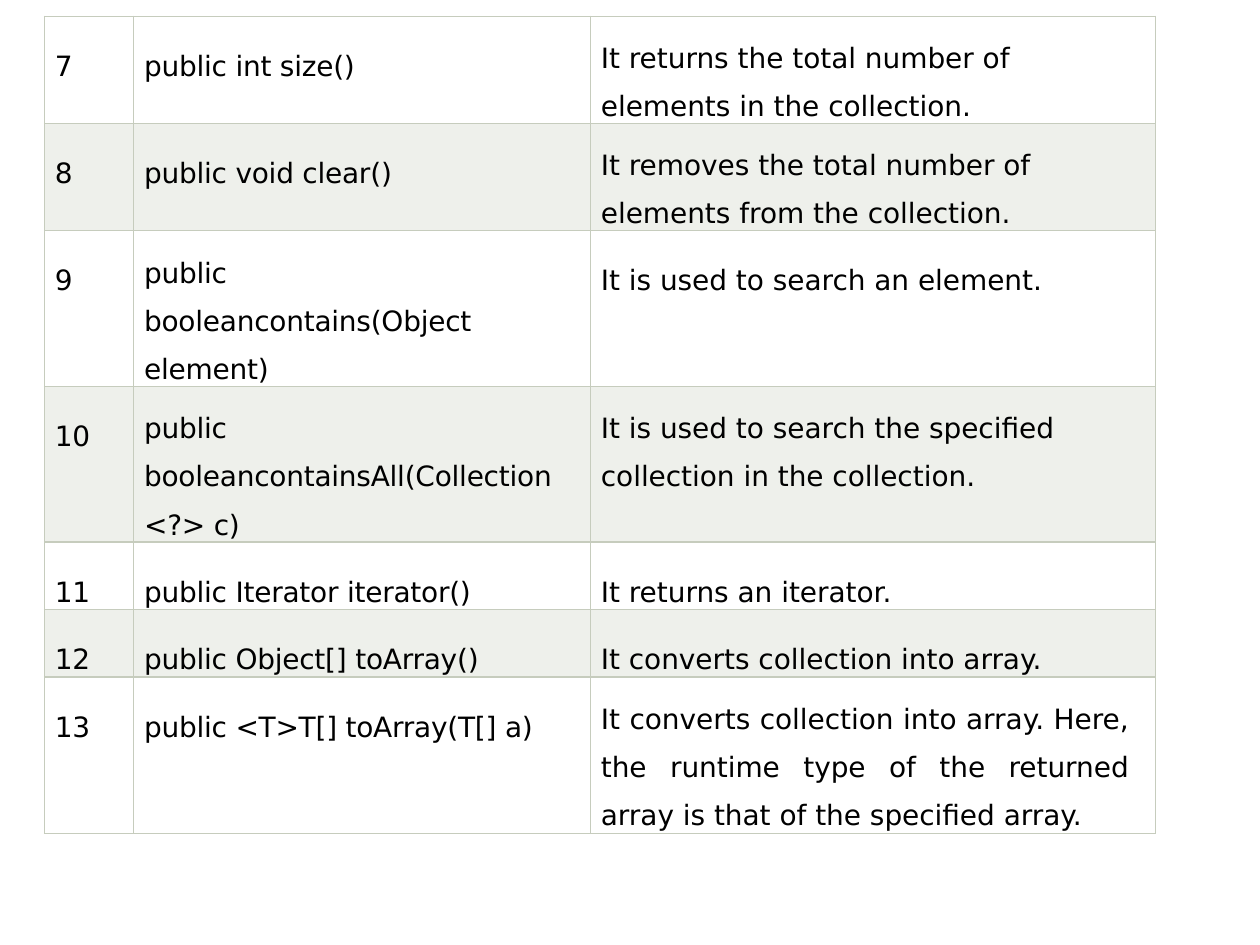
from dataclasses import dataclass

from lxml.etree import SubElement
from pptx import Presentation
from pptx.dml.color import RGBColor
from pptx.enum.text import PP_ALIGN as Align
from pptx.oxml.ns import qn
from pptx.table import _Cell as Cell
from pptx.util import Pt

BLACK = RGBColor(0x00, 0x00, 0x00)
BAND = RGBColor(0xEE, 0xF0, 0xEB)
EDGE = RGBColor(0xC6, 0xCC, 0xBD)
FONT = "DejaVu Sans"
LEFT, TOP = 25.4, 9.2
SINGLE, LOOSE = 19.6, 6.2  # space above one-line and wrapped text


@dataclass
class Col:
    width: float
    right: float  # right margin
    track: int    # letter spacing in hundredths of a point


@dataclass
class Row:
    height: float
    texts: tuple[str, str, str]
    wrapped: tuple[int, ...] = ()  # columns whose text wraps
    justify: bool = False


COLS = [Col(51, 0, -20), Col(261, 19, -10), Col(323, 15, 0)]
ROWS = [
    Row(61, ("7", "public int size()",
             "It returns the total number of elements in the collection."), (2,)),
    Row(61, ("8", "public void clear()",
             "It removes the total number of elements from the collection."), (2,)),
    Row(89, ("9", "public booleancontains(Object element)",
             "It is used to search an element."), (1,)),
    Row(89, ("10", "public booleancontainsAll(Collection<?> c)",
             "It is used to search the specified collection in the collection."),
        (1, 2)),
    Row(38.6, ("11", "public Iterator iterator()", "It returns an iterator.")),
    Row(38.6, ("12", "public Object[] toArray()",
               "It converts collection into array.")),
    Row(89.4, ("13", "public <T>T[] toArray(T[] a)",
               "It converts collection into array. Here, the runtime type of "
               "the returned array is that of the specified array."), (2,), True),
]


def add_edges(cell: Cell) -> None:
    props = cell._tc.get_or_add_tcPr()
    for side in ("lnL", "lnR", "lnT", "lnB"):
        line = SubElement(props, qn(f"a:{side}"), w=str(Pt(0.75)))
        fill = SubElement(line, qn("a:solidFill"))
        SubElement(fill, qn("a:srgbClr"), val=str(EDGE))


def fill_cell(cell: Cell, text: str, col: Col, wrapped: bool,
              justify: bool, band: bool) -> None:
    add_edges(cell)
    if band:
        cell.fill.solid()
        cell.fill.fore_color.rgb = BAND
    else:
        cell.fill.background()
    cell.margin_left, cell.margin_right = Pt(6), Pt(col.right)
    cell.margin_top, cell.margin_bottom = Pt(LOOSE if wrapped else SINGLE), Pt(0)

    # Text
    cell.text_frame.text = text
    para = cell.text_frame.paragraphs[0]
    para.alignment = Align.JUSTIFY if justify else Align.LEFT
    if wrapped:
        para.line_spacing = 1.49
    run = para.runs[0]
    run.font.name, run.font.size = FONT, Pt(16)
    run.font.color.rgb = BLACK
    run.font._element.set("spc", str(col.track))


def main() -> None:
    deck = Presentation()
    deck.slide_width, deck.slide_height = Pt(720), Pt(540)
    slide = deck.slides.add_slide(deck.slide_layouts[6])

    # Table of collection methods
    wide = sum(col.width for col in COLS)
    high = sum(row.height for row in ROWS)
    table = slide.shapes.add_table(len(ROWS), len(COLS), Pt(LEFT), Pt(TOP),
                                   Pt(wide), Pt(high)).table
    table.first_row = table.horz_banding = False
    for c, col in enumerate(COLS):
        table.columns[c].width = Pt(col.width)
    for r, row in enumerate(ROWS):
        table.rows[r].height = Pt(row.height)
        for c, col in enumerate(COLS):
            wrapped = c in row.wrapped
            fill_cell(table.cell(r, c), row.texts[c], col, wrapped,
                      wrapped and row.justify, r % 2 == 1)

    deck.save("out.pptx")


if __name__ == "__main__":
    main()
